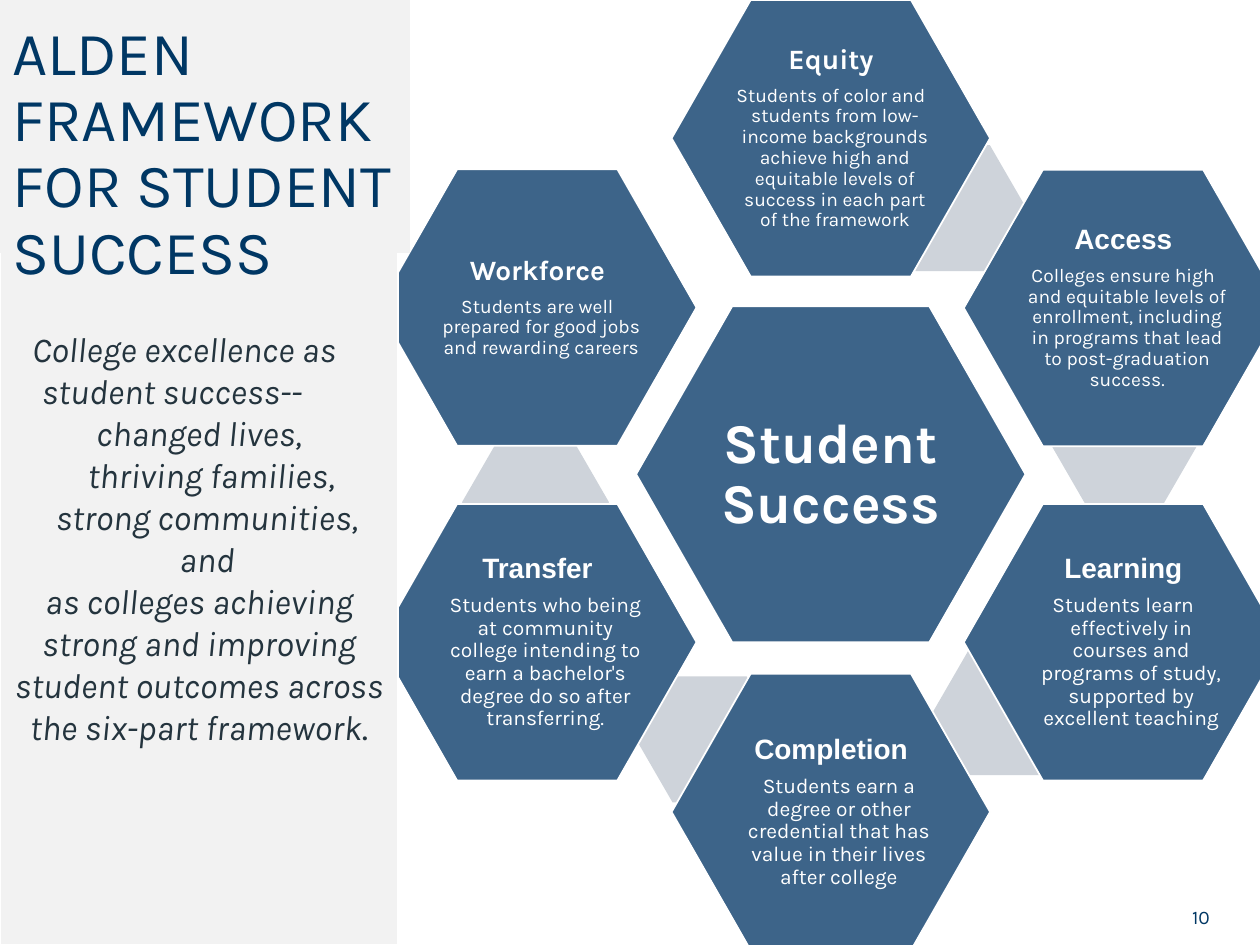
from pptx import Presentation
from pptx.dml.color import RGBColor
from pptx.enum.shapes import MSO_SHAPE as Shape
from pptx.enum.text import MSO_ANCHOR as Anchor, PP_ALIGN as Align
from pptx.util import Pt

NAVY, BLUE, WHITE = "003764", "3D6489", "FFFFFF"
PALE, PANEL, INK = "CED3DA", "F2F2F2", "24343E"
LEFT, MIDDLE, RIGHT = 216, 383.75, 550.75
PARTS = [
    (MIDDLE, 0, "Equity", "Karla", 11, (4.5, -4.5),
     "Students of color and students from low-income backgrounds achieve "
     "high and equitable levels of success in each part of the framework"),
    (RIGHT, 97, "Access", "Arial", 11, (4.5, -4.5),
     "Colleges ensure high and equitable levels of enrollment, including "
     "in programs that lead to post-graduation success."),
    (RIGHT, 288, "Learning", "Arial", 12, (9, -9),
     "Students learn effectively in courses and programs of study, "
     "supported by excellent teaching"),
    (MIDDLE, 385, "Completion", "Arial", 12, (9, 0),
     "Students earn a degree or other credential that has value in their "
     "lives after college"),
    (LEFT, 288, "Transfer", "Arial", 12, (9, 0),
     "Students who being at community college intending to earn a "
     "bachelor's degree do so after transferring."),
    (LEFT, 96.75, "Workforce", "Karla", 11, (4.5, -4.5),
     "Students are well prepared for good jobs and rewarding careers"),
]
LINKS = [(502.5, 83), (600.5, 218), (533, 371), (363.5, 386.5), (264, 251)]
VISION = [
    ("College excellence as", 0, 17),
    ("student success--", 0, 31),
    ("changed lives,", 0, 0),
    ("thriving families,", 14, 0),
    ("strong communities,", 9, 0),
    ("and", 9, 0),
    ("as colleges achieving strong and improving student outcomes across "
     "the six-part framework", 0, 0),
]


def color(value):
    """Turn a hex string into a colour."""
    return RGBColor.from_string(value)


def add_block(page, kind, frame, fill, line=None, weight=1):
    """Add a filled preset shape with an optional outline."""
    block = page.shapes.add_shape(kind, *map(Pt, frame))
    block.shadow.inherit = False
    block.fill.solid()
    block.fill.fore_color.rgb = color(fill)
    if line:
        block.line.color.rgb = color(line)
        block.line.width = Pt(weight)
    else:
        block.line.fill.background()
    return block


def add_hexagon(page, frame, fill, line=None, slant=0.286):
    """Add a hexagon with the given slant."""
    hexagon = add_block(page, Shape.HEXAGON, frame, fill, line)
    hexagon.adjustments[0] = slant
    hexagon.adjustments[1] = 1.155


def set_frame(shape, anchor=Anchor.TOP, insets=(7.2, 3.6, 7.2, 3.6)):
    """Wrap, anchor and inset the text of a shape."""
    frame = shape.text_frame
    frame.word_wrap = True
    frame.vertical_anchor = anchor
    (frame.margin_left, frame.margin_top,
     frame.margin_right, frame.margin_bottom) = map(Pt, insets)
    return frame


def add_textbox(page, frame, **options):
    """Add a text box and return its text frame."""
    return set_frame(page.shapes.add_textbox(*map(Pt, frame)), **options)


def add_span(para, text, size, hue, font="Karla", bold=False, italic=False):
    """Add one formatted run to a paragraph."""
    span = para.add_run()
    span.text = text
    span.font.size = Pt(size)
    span.font.name = font
    span.font.bold = bold
    span.font.italic = italic
    span.font.color.rgb = color(hue)


def write(frame, text, align=Align.CENTER, spacing=None, after=0,
          left=0, right=0, indent=0, **style):
    """Write a paragraph, reusing the empty first one."""
    para = frame.paragraphs[0]
    if para.runs:
        para = frame.add_paragraph()
    para.alignment = align
    para.space_after = Pt(after)
    if spacing:
        para.line_spacing = spacing
    properties = para._p.get_or_add_pPr()
    for name, value in (("marL", left), ("marR", right), ("indent", indent)):
        properties.set(name, str(int(Pt(value))))
    add_span(para, text, **style)
    return para


def add_part(page, left, top, heading, font, size, margins, body):
    """Add one framework part: hexagon, heading and description."""
    add_hexagon(page, (left, top, 182, 158), BLUE, WHITE)
    frame = add_textbox(page, (left + 30.25, top + 26, 121.75, 106),
                        anchor=Anchor.MIDDLE, insets=(1.5,) * 4)
    write(frame, heading, spacing=0.9, after=5.6, size=16, hue=WHITE,
          font=font, bold=True)
    write(frame, body, spacing=0.9, left=margins[0], indent=margins[1],
          size=size, hue=WHITE)


def add_center(page):
    """Add the central hexagon."""
    add_hexagon(page, (363.5, 175, 222.5, 192), BLUE, WHITE)
    frame = add_textbox(page, (400.25, 207.25, 149, 129),
                        anchor=Anchor.MIDDLE, insets=(3,) * 4)
    write(frame, "Student Success", spacing=0.9, size=32, hue=WHITE, bold=True)


def add_vision(page):
    """Add the side panel with the vision statement."""
    panel = add_block(page, Shape.RECTANGLE, (0, 139, 227.5, 401),
                      PANEL, WHITE, 0.75)
    frame = set_frame(panel, insets=(7.2, 48, 7.2, 3.6))
    for text, left, right in VISION:
        para = write(frame, text, left=left, right=right, size=20, hue=INK,
                     italic=True)
    add_span(para, ".", 20, INK)


def add_title(page):
    """Add the title panel."""
    panel = add_block(page, Shape.RECTANGLE, (0, 0, 234, 144),
                      PANEL, PANEL, 0.75)
    frame = set_frame(panel, insets=(7.2, 13, 7.2, 0))
    write(frame, "ALDEN FRAMEWORK FOR STUDENT SUCCESS", align=Align.LEFT,
          spacing=0.9, size=35, hue=NAVY)


def main():
    """Build the slide and save the deck."""
    deck = Presentation()
    deck.slide_width, deck.slide_height = Pt(720), Pt(540)
    page = deck.slides.add_slide(deck.slide_layouts[6])
    add_center(page)
    for left, top in LINKS:
        add_hexagon(page, (left, top, 84, 72), PALE, slant=0.289)
    for part in PARTS:
        add_part(page, *part)
    add_vision(page)
    number = add_textbox(page, (662.5, 514, 36, 15))
    write(number, "10", align=Align.RIGHT, size=11, hue=NAVY)
    add_title(page)
    deck.save("out.pptx")


if __name__ == "__main__":
    main()
